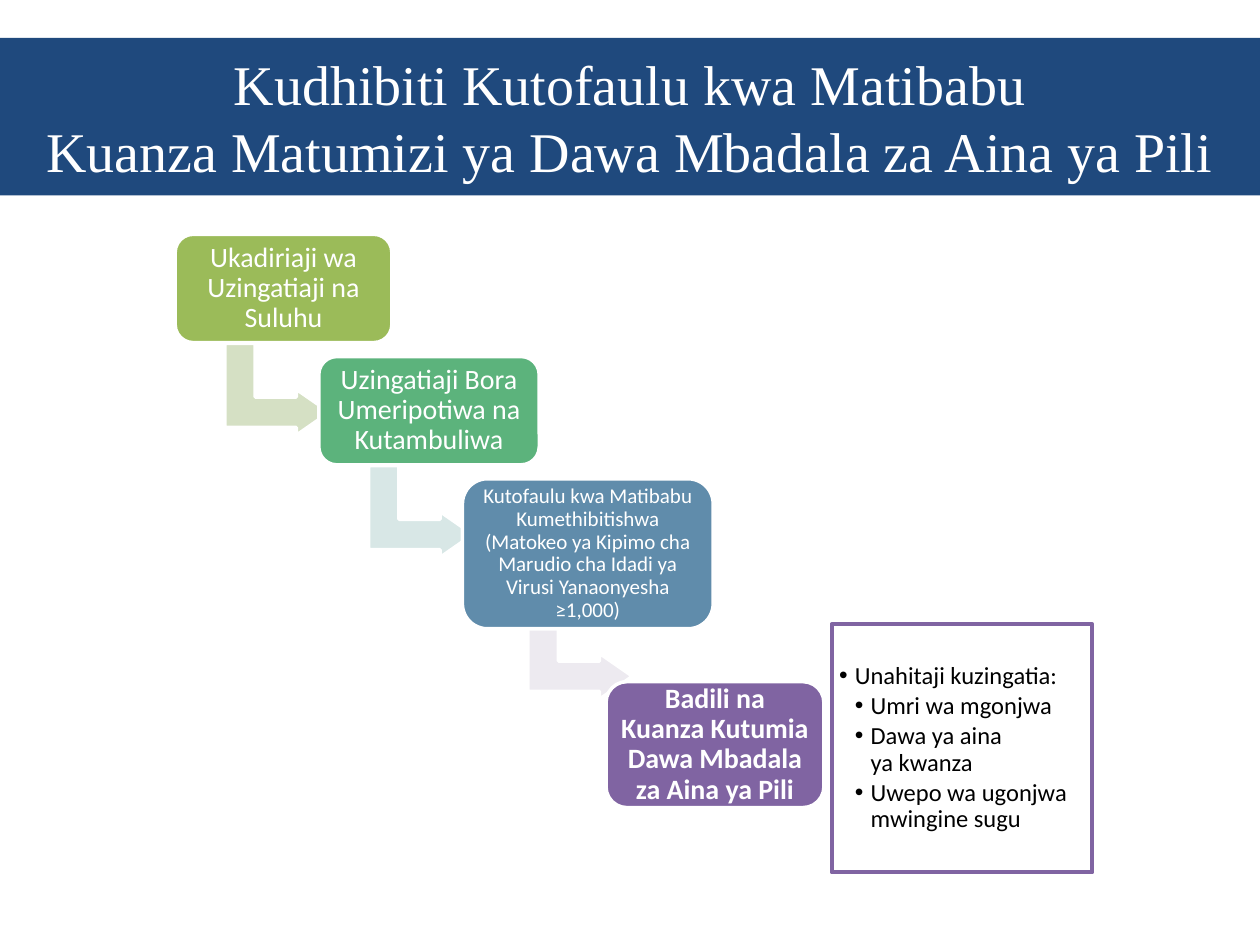
from lxml.etree import SubElement
from pptx import Presentation
from pptx.dml.color import RGBColor
from pptx.enum.shapes import MSO_SHAPE as Shape
from pptx.enum.text import MSO_ANCHOR as Anchor, MSO_AUTO_SIZE as AutoSize, PP_ALIGN as Align
from pptx.oxml.ns import qn
from pptx.util import Inches, Pt

WHITE = RGBColor(0xFF, 0xFF, 0xFF)
BLACK = RGBColor(0x00, 0x00, 0x00)
NAVY = RGBColor(0x1F, 0x49, 0x7D)
OLIVE = RGBColor(0x9B, 0xBB, 0x59)
GREEN = RGBColor(0x5C, 0xB3, 0x7C)
BLUE = RGBColor(0x60, 0x8C, 0xAB)
PURPLE = RGBColor(0x80, 0x64, 0xA2)
PALE_OLIVE = RGBColor(0xD5, 0xE0, 0xC4)
PALE_TEAL = RGBColor(0xD8, 0xE7, 0xE6)
PALE_PURPLE = RGBColor(0xED, 0xEA, 0xF0)

# The staircase moves one column right and one row down per step
LEFT, TOP = 1.39, 1.86
COLUMN, ROW = 1.14, 0.97

presentation = Presentation()
presentation.slide_width = Inches(10)
presentation.slide_height = Inches(7.5)
slide = presentation.slides.add_slide(presentation.slide_layouts[1])


def place(column, row, width, height):
    """Turn a staircase position and a size in inches into lengths."""
    return (Inches(LEFT + column * COLUMN), Inches(TOP + row * ROW),
            Inches(width), Inches(height))


def add_block(kind, box, color):
    shape = slide.shapes.add_shape(kind, *box)
    shape.shadow.inherit = False
    shape.fill.solid()
    shape.fill.fore_color.rgb = color
    shape.line.color.rgb = WHITE
    shape.line.width = Pt(2)
    return shape


# Title band
title = slide.shapes.title
title.left, title.top = 0, Inches(0.3)
title.width, title.height = presentation.slide_width, Inches(1.25)
title.fill.solid()
title.fill.fore_color.rgb = NAVY
title.text_frame.auto_size = AutoSize.NONE
title.text_frame.vertical_anchor = Anchor.MIDDLE
paragraph = title.text_frame.paragraphs[0]
paragraph.text = "Kudhibiti Kutofaulu kwa Matibabu\nKuanza Matumizi ya Dawa Mbadala za Aina ya Pili"
paragraph.alignment = Align.CENTER
paragraph.font.name = "Times New Roman"
paragraph.font.size = Pt(32)
paragraph.font.color.rgb = WHITE

# Steps: text, row, width, height, colour, size, bold, arrow (column, row, colour)
steps = [
    ("Ukadiriaji wa Uzingatiaji na Suluhu",
     0, 1.72, 0.86, OLIVE, 16, False, (0.39, 0.84, PALE_OLIVE)),
    ("Uzingatiaji Bora Umeripotiwa na Kutambuliwa",
     1, 1.75, 0.86, GREEN, 16, False, (1.39, 1.84, PALE_TEAL)),
    ("Kutofaulu kwa Matibabu Kumethibitishwa (Matokeo ya Kipimo cha "
     "Marudio cha Idadi ya Virusi Yanaonyesha ≥1,000)",
     2, 1.99, 1.19, BLUE, 12, False, (2.5, 3, PALE_PURPLE)),
    ("Badili na Kuanza Kutumia Dawa Mbadala za Aina ya Pili",
     3.66, 1.73, 1, PURPLE, 16, True, None),
]
for column, (text, row, width, height, color, size, bold, arrow) in enumerate(steps):
    if arrow:
        arrow_column, arrow_row, arrow_color = arrow
        bend = add_block(Shape.BENT_UP_ARROW,
                         place(arrow_column, arrow_row, 0.73, 0.83), arrow_color)
        bend.rotation = 90
        for index, value in enumerate((0.33, 0.25, 0.36)):
            bend.adjustments[index] = value

    step = add_block(Shape.ROUNDED_RECTANGLE, place(column, row, width, height), color)
    frame = step.text_frame
    frame.word_wrap = True
    frame.vertical_anchor = Anchor.MIDDLE
    # The rounded corners add their own small inset
    frame.margin_left = frame.margin_right = Inches(0.07)
    frame.margin_top = frame.margin_bottom = Inches(0.05)
    paragraph = frame.paragraphs[0]
    paragraph.text = text
    paragraph.alignment = Align.CENTER
    paragraph.line_spacing = 0.9
    paragraph.font.name = "Calibri"
    paragraph.font.size = Pt(size)
    paragraph.font.bold = bold
    paragraph.font.color.rgb = WHITE

# Considerations beside the last step
considerations = slide.placeholders[1]
(considerations.left, considerations.top,
 considerations.width, considerations.height) = place(4.57, 3.19, 2.07, 1.97)
considerations.line.color.rgb = PURPLE
considerations.line.width = Pt(2.25)
frame = considerations.text_frame
frame.auto_size = AutoSize.NONE
frame.word_wrap = True
frame.vertical_anchor = Anchor.MIDDLE
frame.margin_left = frame.margin_right = Inches(0.06)
frame.margin_top = frame.margin_bottom = Inches(0.06)
items = [
    (1, "Unahitaji kuzingatia:"),
    (2, "Umri wa mgonjwa"),
    (2, "Dawa ya aina\nya kwanza"),
    (2, "Uwepo wa ugonjwa mwingine sugu"),
]
for index, (level, text) in enumerate(items):
    paragraph = frame.add_paragraph() if index else frame.paragraphs[0]
    paragraph.text = text
    paragraph.level = level
    properties = paragraph._p.get_or_add_pPr()
    properties.set("marL", str(Inches(0.125 * level)))
    properties.set("indent", str(Inches(-0.125)))
    SubElement(properties, qn("a:buChar")).set("char", "•")
    paragraph.alignment = Align.LEFT
    paragraph.line_spacing = 0.9
    paragraph.space_before = Pt(0)
    paragraph.space_after = Pt(2)
    paragraph.font.name = "Calibri"
    paragraph.font.size = Pt(14)
    paragraph.font.color.rgb = BLACK

presentation.save("out.pptx")
